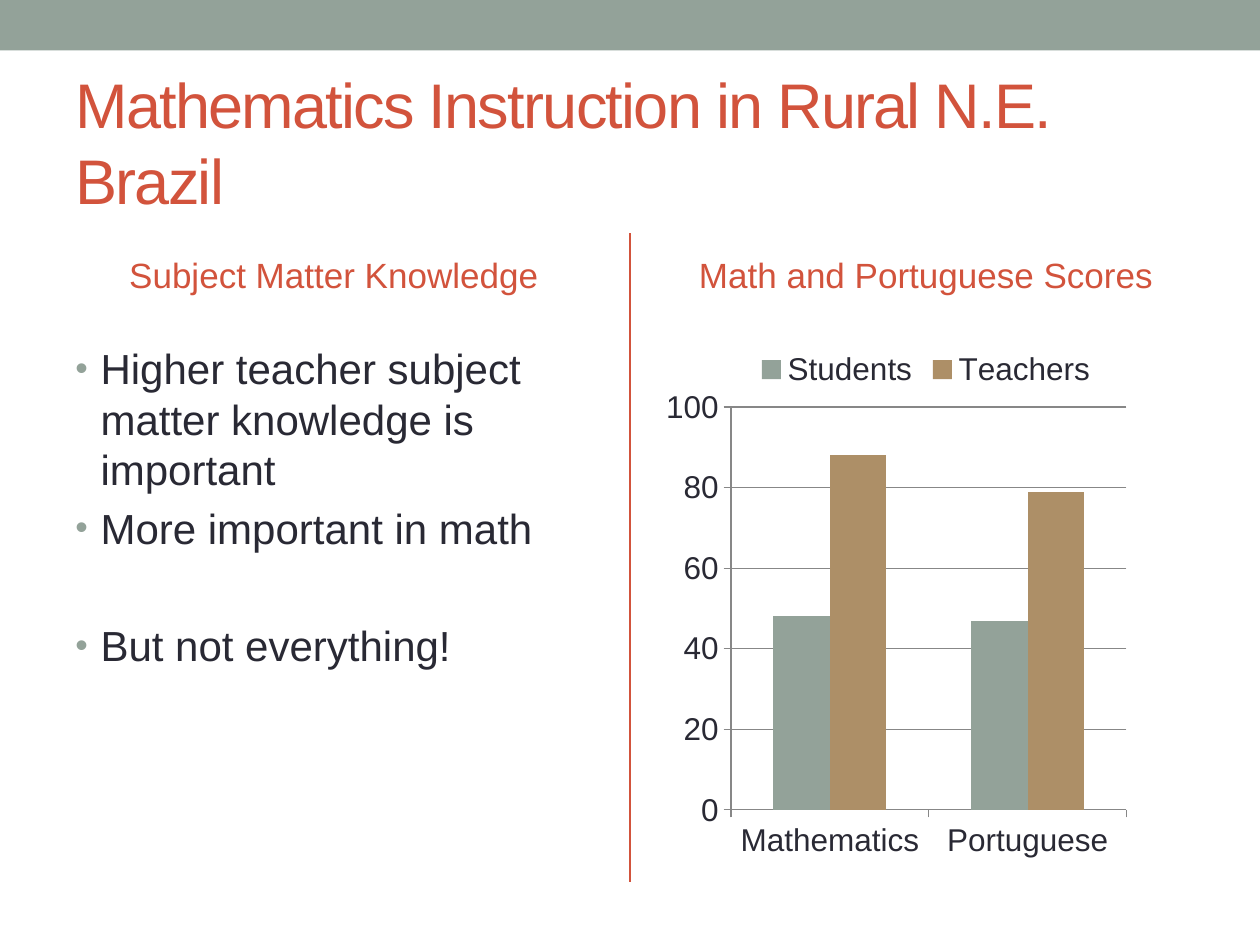
from dataclasses import dataclass

import pptx
import pptx.chart.data
import pptx.dml.color
import pptx.enum.chart
import pptx.enum.shapes
import pptx.enum.text
import pptx.oxml
import pptx.util
from lxml import etree
from pptx.util import Inches, Pt

FONT = "Arial"
SAGE, RUST, TAN, INK, GRAY = "93A299", "D2533C", "AD8F67", "292934", "878787"
LEFT_X, RIGHT_X, COL_W = 0.5, 5.2, 4.3
HEAD_Y, HEAD_H, BODY_Y, BODY_H = 1.83, 0.7, 2.67, 4.32
ALIGN = pptx.enum.text.PP_ALIGN
ANCHOR = pptx.enum.text.MSO_ANCHOR
NS = pptx.oxml.ns.qn


@dataclass
class Para:
    text: str
    before: float = 0
    bullet: bool = False


@dataclass
class TextBlock:
    x: float
    y: float
    w: float
    h: float
    paras: list[Para]
    size: float
    color: str
    align: ALIGN = ALIGN.LEFT
    anchor: ANCHOR = ANCHOR.MIDDLE
    spacing: int = 0


@dataclass
class Series:
    name: str
    values: tuple[float, ...]
    color: str


def rgb(color: str) -> pptx.dml.color.RGBColor:
    return pptx.dml.color.RGBColor.from_string(color)


def set_attrs(obj, values: dict) -> None:
    for name, value in values.items():
        setattr(obj, name, value)


def style_font(font, size: float, color: str) -> None:
    set_attrs(font, {"name": FONT, "size": Pt(size), "bold": False})
    font.color.rgb = rgb(color)


def add_bullet(p) -> None:
    pPr = p._p.get_or_add_pPr()
    pPr.set("marL", str(Inches(0.2)))
    pPr.set("indent", str(Inches(-0.2)))
    clr = etree.SubElement(pPr, NS("a:buClr"))
    etree.SubElement(clr, NS("a:srgbClr"), val=SAGE)
    etree.SubElement(pPr, NS("a:buSzPct"), val="85000")
    etree.SubElement(pPr, NS("a:buFont"), typeface=FONT)
    etree.SubElement(pPr, NS("a:buChar"), char="•")


def add_text(s, b: TextBlock) -> None:
    sp = s.shapes.add_textbox(Inches(b.x), Inches(b.y), Inches(b.w), Inches(b.h))
    tf = sp.text_frame
    set_attrs(tf, {"word_wrap": True, "vertical_anchor": b.anchor})
    for i, para in enumerate(b.paras):
        p = tf.add_paragraph() if i else tf.paragraphs[0]
        set_attrs(p, {"alignment": b.align, "space_before": Pt(para.before)})
        if para.bullet:
            add_bullet(p)
        r = p.add_run()
        r.text = para.text
        style_font(r.font, b.size, b.color)
        if b.spacing:
            r.font._element.set("spc", str(b.spacing))


def set_plot_layout(chart, x: float, y: float, w: float, h: float) -> None:
    plot_area = chart._chartSpace.find(".//" + NS("c:plotArea"))
    layout = plot_area.find(NS("c:layout"))
    if layout is None:
        layout = etree.Element(NS("c:layout"))
        plot_area.insert(0, layout)
    manual = etree.SubElement(layout, NS("c:manualLayout"))
    values = {"layoutTarget": "inner", "xMode": "edge", "yMode": "edge",
              "x": x, "y": y, "w": w, "h": h}
    for tag, value in values.items():
        etree.SubElement(manual, NS("c:" + tag), val=str(value))


def add_score_chart(s, categories: list[str], series: list[Series]) -> None:
    data = pptx.chart.data.CategoryChartData()
    data.categories = categories
    for item in series:
        data.add_series(item.name, item.values)
    chart = s.shapes.add_chart(
        pptx.enum.chart.XL_CHART_TYPE.COLUMN_CLUSTERED,
        Inches(RIGHT_X), Inches(BODY_Y), Inches(COL_W), Inches(BODY_H), data).chart
    set_attrs(chart, {"has_title": False, "has_legend": True})
    style_font(chart.font, 18, INK)
    set_attrs(chart.legend, {"position": pptx.enum.chart.XL_LEGEND_POSITION.TOP,
                             "include_in_layout": False})

    plot = chart.plots[0]
    set_attrs(plot, {"gap_width": 150, "overlap": 0, "vary_by_categories": False})
    for bar, item in zip(plot.series, series):
        bar.format.fill.solid()
        bar.format.fill.fore_color.rgb = rgb(item.color)

    set_attrs(chart.value_axis, {"minimum_scale": 0, "maximum_scale": 100,
                                 "major_unit": 20, "has_major_gridlines": True})
    for axis in (chart.category_axis, chart.value_axis):
        axis.major_tick_mark = pptx.enum.chart.XL_TICK_MARK.OUTSIDE
    for part in (chart.category_axis, chart.value_axis, chart.value_axis.major_gridlines):
        part.format.line.color.rgb = rgb(GRAY)
        part.format.line.width = Pt(0.75)
    set_plot_layout(chart, 0.14, 0.13, 0.73, 0.74)


def main() -> None:
    prs = pptx.Presentation()
    set_attrs(prs, {"slide_width": Inches(10), "slide_height": Inches(7.5)})
    s = prs.slides.add_slide(prs.slide_layouts[6])

    # Top band
    band = s.shapes.add_shape(pptx.enum.shapes.MSO_SHAPE.RECTANGLE,
                              0, 0, prs.slide_width, Inches(0.4))
    band.shadow.inherit = False
    band.fill.solid()
    band.fill.fore_color.rgb = rgb(SAGE)
    band.line.fill.background()

    # Column divider
    divider = s.shapes.add_connector(pptx.enum.shapes.MSO_CONNECTOR.STRAIGHT,
                                     Inches(5), Inches(1.85), Inches(5), Inches(7))
    divider.line.color.rgb = rgb(RUST)
    divider.line.width = Pt(1.5)
    etree.SubElement(divider._element.spPr, NS("a:effectLst"))

    # Title, column headings and bullets
    add_text(s, TextBlock(0.5, 0.58, 9, 1.08,
                          [Para("Mathematics Instruction in Rural N.E. Brazil")],
                          36, RUST, spacing=-100))
    for x, heading in ((LEFT_X, "Subject Matter Knowledge"),
                       (RIGHT_X, "Math and Portuguese Scores")):
        add_text(s, TextBlock(x, HEAD_Y, COL_W, HEAD_H, [Para(heading, 4)],
                              20, RUST, ALIGN.CENTER))
    bullets = [
        Para("Higher teacher subject matter knowledge is important", 4.8, True),
        Para("More important in math", 4.8, True),
        Para("But not everything!", 38.5, True),
    ]
    add_text(s, TextBlock(LEFT_X, BODY_Y, COL_W, BODY_H, bullets, 24, INK,
                          anchor=ANCHOR.TOP))

    # Score chart
    add_score_chart(s, ["Mathematics", "Portuguese"],
                    [Series("Students", (48, 47), SAGE),
                     Series("Teachers", (88, 79), TAN)])

    prs.save("out.pptx")


if __name__ == "__main__":
    main()
